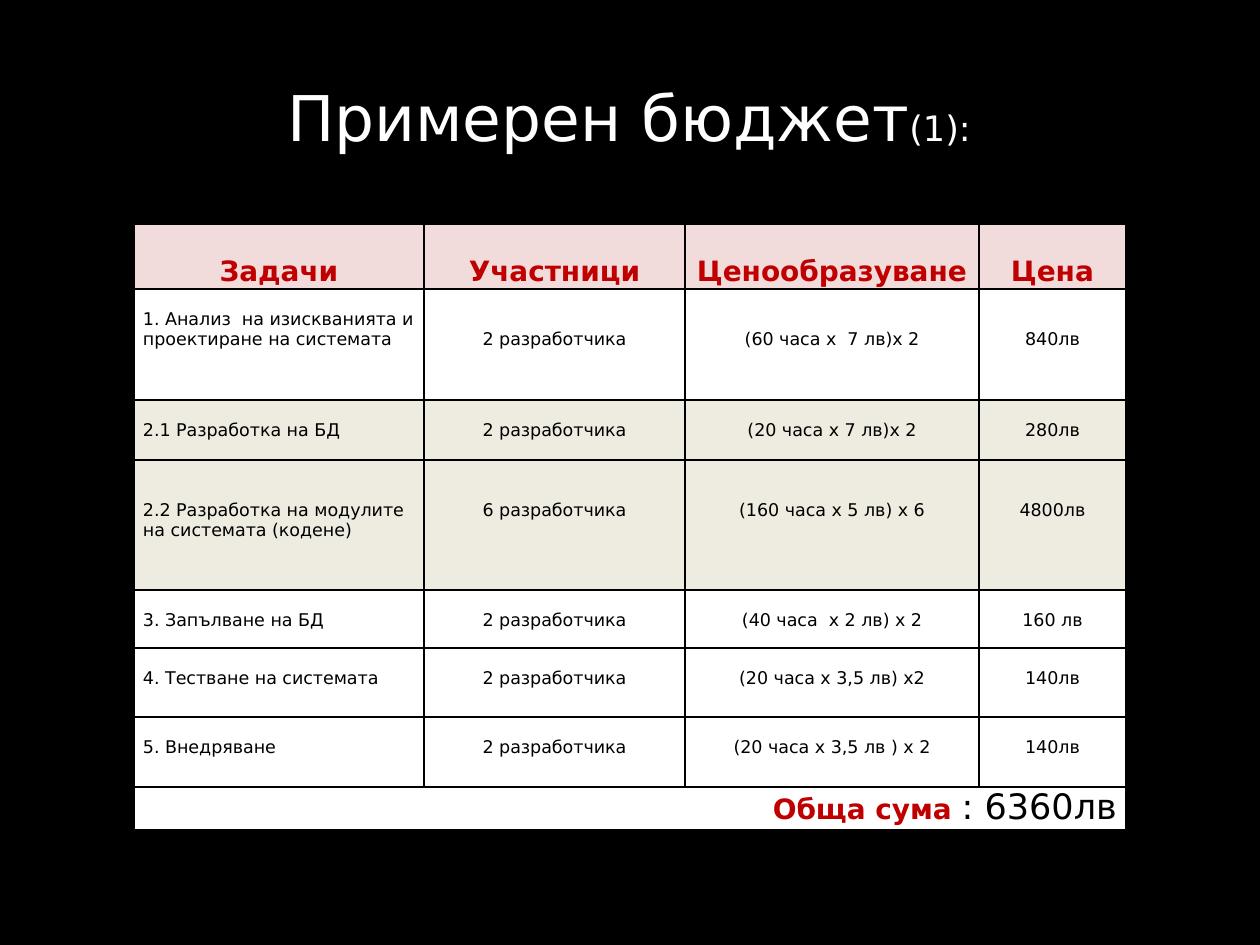
from lxml import etree
from pptx import Presentation
from pptx.dml.color import RGBColor
from pptx.enum.text import MSO_ANCHOR, PP_ALIGN
from pptx.oxml.ns import qn
from pptx.util import Emu, Pt

LEFT, CENTER, RIGHT = PP_ALIGN.LEFT, PP_ALIGN.CENTER, PP_ALIGN.RIGHT
MIDDLE, TOP = MSO_ANCHOR.MIDDLE, MSO_ANCHOR.TOP
FONT = "DejaVu Sans"
COLORS = {"black": "000000", "white": "FFFFFF", "red": "C00000",
          "pink": "F2DBDB", "beige": "EEECE1"}
TITLE_LAYOUT = 5
LINE = 20  # height of one line of body text, px
SIDE = 9   # side margin of a cell, px

COLUMNS = [290, 261, 294, 147]
HEADER = ["Задачи", "Участници", "Ценообразуване", "Цена"]
# height, fill, lines above the task, lines above the other cells, texts
TASKS = [
    (111, "white", 1, 2, ["1. Анализ  на изискванията и проектиране на системата",
                          "2 разработчика", "(60 часа x  7 лв)x 2", "840лв"]),
    (60, "beige", 1, 1, ["2.1 Разработка на БД",
                         "2 разработчика", "(20 часа x 7 лв)x 2", "280лв"]),
    (130, "beige", 2, 2, ["2.2 Разработка на модулите на системата (кодене)",
                          "6 разработчика", "(160 часа x 5 лв) x 6", "4800лв"]),
    (58, "white", 1, 1, ["3. Запълване на БД",
                         "2 разработчика", "(40 часа  х 2 лв) х 2", "160 лв"]),
    (69, "white", 1, 1, ["4. Тестване на системата",
                         "2 разработчика", "(20 часа x 3,5 лв) x2", "140лв"]),
    (70, "white", 1, 1, ["5. Внедряване",
                         "2 разработчика", "(20 часа x 3,5 лв ) x 2", "140лв"]),
]
HEADER_HEIGHT, TOTAL_HEIGHT = 65, 43


def px(n):
    return Emu(round(n * 914400 / 126))


def rgb(name):
    return RGBColor.from_string(COLORS[name])


def add_run(p, text, size, color, bold=False):
    r = p.add_run()
    r.text = text
    for name, value in {"name": FONT, "size": Pt(size), "bold": bold}.items():
        setattr(r.font, name, value)
    r.font.color.rgb = rgb(color)


def add_borders(cell):
    tcPr = cell._tc.get_or_add_tcPr()
    for i, side in enumerate(("lnL", "lnR", "lnT", "lnB")):
        ln = etree.Element(qn(f"a:{side}"), w=str(Pt(1)))
        fill = etree.SubElement(ln, qn("a:solidFill"))
        etree.SubElement(fill, qn("a:srgbClr"), val=COLORS["black"])
        tcPr.insert(i, ln)


def fill_cell(cell, fill, runs, align, top=0):
    cell.fill.solid()
    cell.fill.fore_color.rgb = rgb(fill)
    margins = {"margin_left": SIDE, "margin_right": SIDE,
               "margin_top": top, "margin_bottom": 0}
    for name, value in margins.items():
        setattr(cell, name, px(value))
    cell.vertical_anchor = TOP
    p = cell.text_frame.paragraphs[0]
    p.alignment = align
    for run in runs:
        add_run(p, *run)


def place_title(s, x, y, w, h):
    title = s.shapes.title
    box = {"left": x, "top": y, "width": w, "height": h}
    for name, value in box.items():
        setattr(title, name, px(value))
    tf = title.text_frame
    tf.vertical_anchor = MIDDLE
    p = tf.paragraphs[0]
    p.alignment = CENTER
    add_run(p, "Примерен бюджет", 36, "white")
    add_run(p, "(1):", 20, "white")


def add_budget(s, x, y):
    heights = [HEADER_HEIGHT, *(task[0] for task in TASKS), TOTAL_HEIGHT]
    table = s.shapes.add_table(len(heights), len(COLUMNS), px(x), px(y),
                               px(sum(COLUMNS)), px(sum(heights))).table
    table.first_row = table.horz_banding = False
    for column, width in zip(table.columns, COLUMNS):
        column.width = px(width)
    for row, height in zip(table.rows, heights):
        row.height = px(height)

    # Header
    for col, text in enumerate(HEADER):
        fill_cell(table.cell(0, col), "pink", [(text, 16, "red", True)], CENTER, 32)

    # Tasks
    for row, (_, fill, task_gap, other_gap, texts) in enumerate(TASKS, 1):
        for col, text in enumerate(texts):
            align, gap = (CENTER, other_gap) if col else (LEFT, task_gap)
            fill_cell(table.cell(row, col), fill, [(text, 10, "black")],
                      align, gap * LINE)

    # Total
    last = len(heights) - 1
    total = table.cell(last, 0)
    total.merge(table.cell(last, len(COLUMNS) - 1))
    fill_cell(total, "white", [("Обща сума ", 16, "red", True),
                               (": 6360лв", 20, "black")], RIGHT)

    for cell in table.iter_cells():
        add_borders(cell)


def main():
    prs = Presentation()
    prs.slide_width, prs.slide_height = px(1260), px(945)
    s = prs.slides.add_slide(prs.slide_layouts[TITLE_LAYOUT])
    s.background.fill.solid()
    s.background.fill.fore_color.rgb = rgb("black")
    place_title(s, -1, 37, 1260, 158)
    add_budget(s, 134, 224)
    prs.save("out.pptx")


if __name__ == "__main__":
    main()
